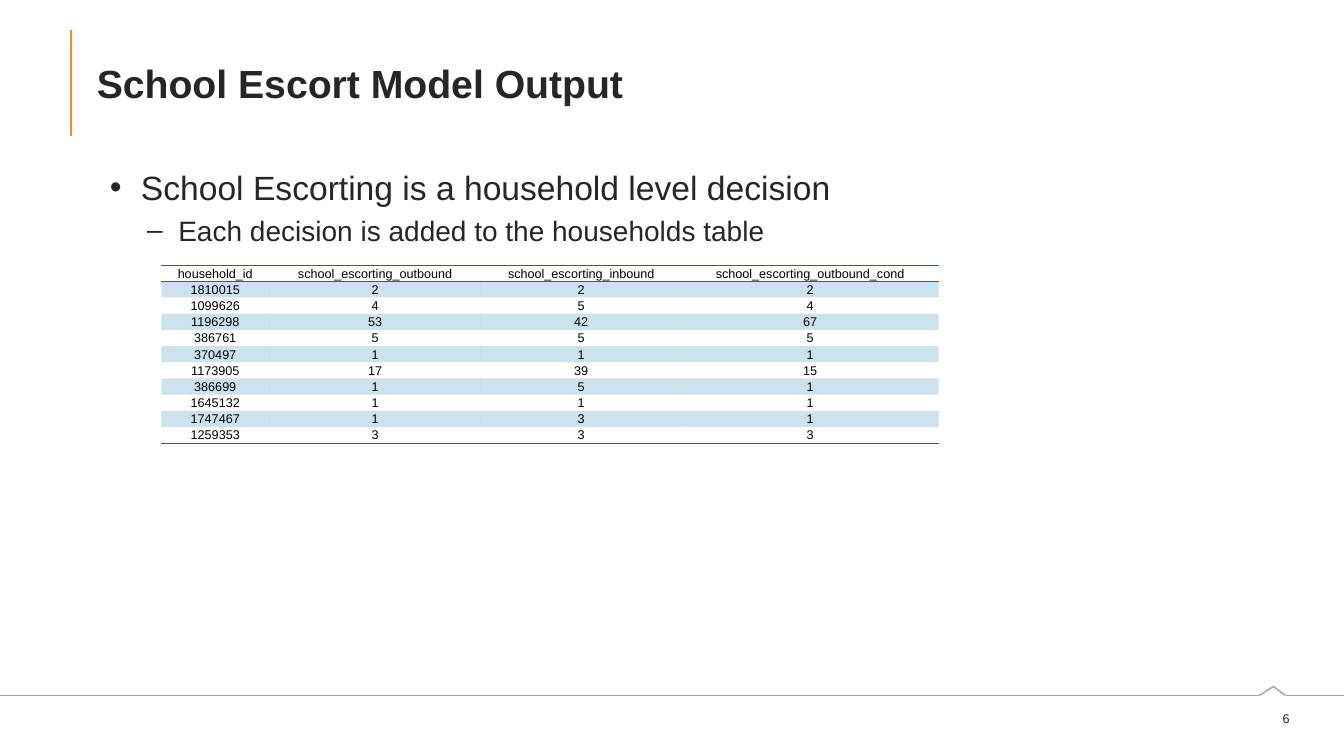
from dataclasses import dataclass
from itertools import pairwise

from lxml.etree import SubElement
from pptx import Presentation
from pptx.dml.color import RGBColor
from pptx.enum.shapes import MSO_CONNECTOR
from pptx.enum.text import MSO_ANCHOR, MSO_AUTO_SIZE, PP_ALIGN
from pptx.oxml import parse_xml
from pptx.oxml.ns import nsdecls, qn
from pptx.util import Emu, Pt

EMU_PER_PX = 9144
FONT = "Arial"
INK = "262626"
BLACK = "000000"
ORANGE = "F68B1F"
GRAY = "A3A3A5"
BLUE = "006FA1"
NO_TABLE_STYLE = "{2D5ABB26-0587-4C30-8999-92F81FD0307C}"
BAND_OPACITY = 20
ROW_HEIGHT = 13


@dataclass(frozen=True)
class Bullet:
    text: str
    mark: str
    size: int
    level: int
    margin: int
    space_before: int


@dataclass(frozen=True)
class Column:
    heading: str
    width: int
    values: tuple[int, ...]


BULLETS = (
    Bullet("School Escorting is a household level decision", "•", 24, 0, 44, 0),
    Bullet("Each decision is added to the households table", "–", 20, 1, 81, 4),
)
HANGING = 31

COLUMNS = (
    Column("household_id", 107, (1810015, 1099626, 1196298, 386761, 370497,
                                 1173905, 386699, 1645132, 1747467, 1259353)),
    Column("school_escorting_outbound", 210, (2, 4, 53, 5, 1, 17, 1, 1, 1, 3)),
    Column("school_escorting_inbound", 199, (2, 5, 42, 5, 1, 39, 5, 1, 3, 3)),
    Column("school_escorting_outbound_cond", 255, (2, 4, 67, 5, 1, 15, 1, 1, 1, 3)),
)

FOOTER_POINTS = ((0, 690), (1249, 690), (1263, 681), (1275, 690), (1333, 690))


def px(length: int) -> Emu:
    return Emu(length * EMU_PER_PX)


def color(value: str) -> RGBColor:
    return RGBColor.from_string(value)


def format_paragraph(paragraph, size: int, ink: str, bold: bool = False) -> None:
    for span in paragraph.runs:
        span.font.name = FONT
        span.font.size = Pt(size)
        span.font.bold = bold
        span.font.color.rgb = color(ink)


def draw_line(page, start: tuple[int, int], end: tuple[int, int], ink: str, width: float) -> None:
    line = page.shapes.add_connector(MSO_CONNECTOR.STRAIGHT, *map(px, start + end))
    line.line.color.rgb = color(ink)
    line.line.width = Pt(width)
    SubElement(line._element.spPr, qn("a:effectLst"))


def draw_title(page) -> None:
    title = page.shapes.title
    title.left, title.top, title.width, title.height = map(px, (86, 30, 1180, 105))
    frame = title.text_frame
    frame.text = "School Escort Model Output"
    frame.auto_size = MSO_AUTO_SIZE.NONE
    frame.vertical_anchor = MSO_ANCHOR.MIDDLE
    frame.paragraphs[0].alignment = PP_ALIGN.LEFT
    format_paragraph(frame.paragraphs[0], 28, INK, bold=True)


def draw_bullets(page) -> None:
    frame = page.shapes.add_textbox(*map(px, (86, 161, 1172, 90))).text_frame
    frame.word_wrap = True
    frame.text = "\n".join(bullet.text for bullet in BULLETS)
    for paragraph, bullet in zip(frame.paragraphs, BULLETS):
        paragraph.level = bullet.level
        paragraph.space_before = Pt(bullet.space_before)
        properties = paragraph._p.get_or_add_pPr()
        properties.set("marL", str(px(bullet.margin)))
        properties.set("indent", str(px(-HANGING)))
        SubElement(properties, qn("a:buFont"), typeface=FONT)
        SubElement(properties, qn("a:buChar"), char=bullet.mark)
        format_paragraph(paragraph, bullet.size, INK)


def add_border(cell, side: str) -> None:
    border = parse_xml(
        f'<a:{side} {nsdecls("a")} w="{Pt(1)}"><a:solidFill>'
        f'<a:srgbClr val="{BLUE}"/></a:solidFill></a:{side}>'
    )
    cell._tc.get_or_add_tcPr().insert(0, border)


def fill_band(cell) -> None:
    cell.fill.solid()
    cell.fill.fore_color.rgb = color(BLUE)
    shade = cell._tc.tcPr.find(f".//{qn('a:srgbClr')}")
    SubElement(shade, qn("a:alpha"), val=str(BAND_OPACITY * 1000))


def format_cell(cell, text: str) -> None:
    cell.text_frame.text = text
    cell.vertical_anchor = MSO_ANCHOR.MIDDLE
    cell.margin_left = cell.margin_top = cell.margin_right = px(1)
    cell.margin_bottom = px(0)
    paragraph = cell.text_frame.paragraphs[0]
    paragraph.alignment = PP_ALIGN.CENTER
    format_paragraph(paragraph, 9, BLACK)


def draw_table(page) -> None:
    last_row = len(COLUMNS[0].values)
    width = sum(column.width for column in COLUMNS)
    area = (160, 263, width, ROW_HEIGHT * (last_row + 1))
    table = page.shapes.add_table(last_row + 1, len(COLUMNS), *map(px, area)).table
    table.horz_banding = False
    table._tbl.tblPr.find(qn("a:tableStyleId")).text = NO_TABLE_STYLE
    for column_index, column in enumerate(COLUMNS):
        table.columns[column_index].width = px(column.width)
        for row_index, value in enumerate((column.heading, *column.values)):
            cell = table.cell(row_index, column_index)
            format_cell(cell, str(value))
            if row_index % 2:
                fill_band(cell)
            else:
                cell.fill.background()
            if row_index in (0, last_row):
                add_border(cell, "lnB")
            if row_index == 0:
                add_border(cell, "lnT")


def draw_page_number(page) -> None:
    frame = page.shapes.add_textbox(*map(px, (1233, 700, 56, 25))).text_frame
    frame.word_wrap = True
    frame.vertical_anchor = MSO_ANCHOR.MIDDLE
    frame.text = "6"
    frame.paragraphs[0].alignment = PP_ALIGN.RIGHT
    format_paragraph(frame.paragraphs[0], 9, INK)


def main() -> None:
    deck = Presentation()
    deck.slide_width, deck.slide_height = px(1333), px(750)
    page = deck.slides.add_slide(deck.slide_layouts.get_by_name("Title Only"))
    draw_line(page, (70, 30), (70, 135), ORANGE, 1.5)
    for start, end in pairwise(FOOTER_POINTS):
        draw_line(page, start, end, GRAY, 1)
    draw_page_number(page)
    draw_title(page)
    draw_bullets(page)
    draw_table(page)
    deck.save("out.pptx")


if __name__ == "__main__":
    main()
